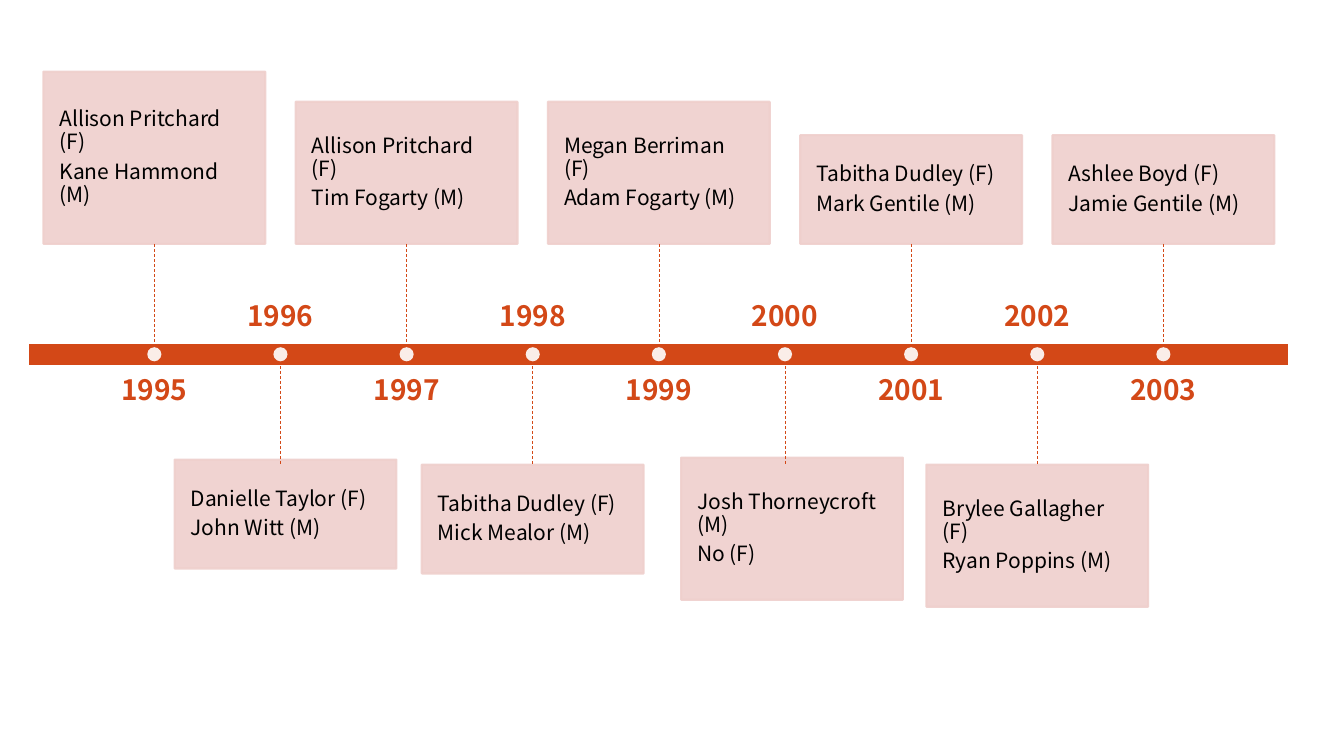
from pptx import Presentation
from pptx.dml.color import RGBColor
from pptx.enum.dml import MSO_LINE
from pptx.enum.shapes import MSO_CONNECTOR, MSO_SHAPE
from pptx.enum.text import MSO_ANCHOR, PP_ALIGN
from pptx.oxml.ns import qn
from pptx.util import Inches, Pt
from lxml.etree import SubElement

# year, names, box height, box shift (right, down)
YEARS = [
    ("1995", ["Allison Pritchard (F)", "Kane Hammond (M)"], 1.71, (0, 0)),
    ("1996", ["Danielle Taylor (F)", "John Witt (M)"], 1.08, (0.05, -0.05)),
    ("1997", ["Allison Pritchard (F)", "Tim Fogarty (M)"], 1.41, (0, 0)),
    ("1998", ["Tabitha Dudley (F)", "Mick Mealor (M)"], 1.08, (0, 0)),
    ("1999", ["Megan Berriman (F)", "Adam Fogarty (M)"], 1.41, (0, 0)),
    ("2000", ["Josh Thorneycroft (M)", "No (F)"], 1.41, (0.07, -0.07)),
    ("2001", ["Tabitha Dudley (F)", "Mark Gentile (M)"], 1.08, (0, 0)),
    ("2002", ["Brylee Gallagher (F)", "Ryan Poppins (M)"], 1.41, (0, 0)),
    ("2003", ["Ashlee Boyd (F)", "Jamie Gentile (M)"], 1.08, (0, 0)),
]

FONT = "Noto Sans CJK JP"
ORANGE, PINK, WHITE, BLACK = "D34817", "EFCFCC", "FFFFFF", "000000"
YEAR_FORMAT = {"name": FONT, "size": Pt(20), "bold": True}
NAME_FORMAT = {"name": FONT, "size": Pt(15), "bold": False}

BAR_LEFT, BAR_TOP, BAR_W, BAR_H = 0.28, 3.4, 12.51, 0.23
BAR_BOTTOM = BAR_TOP + BAR_H
STEP = BAR_W / (len(YEARS) + 1)
STEM = 0.98
BOX_W, BOX_INSET = 2.2, 0.16
LABEL_W, LABEL_H, LABEL_GAP = 2, 0.65, 0.1
DOT = 0.14

prs = Presentation()
prs.slide_width, prs.slide_height = Inches(13.33), Inches(7.5)
slide = prs.slides.add_slide(prs.slide_layouts[6])


def paint(fmt, color, opacity=100):
    """Give a fill a solid colour, see-through when opacity is below 100."""
    fmt.solid()
    fmt.fore_color.rgb = RGBColor.from_string(color)
    if opacity < 100:
        for clr in fmt._xPr.iter(qn("a:srgbClr")):
            SubElement(clr, qn("a:alpha")).set("val", str(opacity * 1000))


def add_shape(kind, x, y, w, h, fill, line=None, opacity=100):
    sp = slide.shapes.add_shape(kind, *map(Inches, (x, y, w, h)))
    sp.shadow.inherit = False
    paint(sp.fill, fill, opacity)
    if line:
        sp.line.width = Pt(1.5)
        paint(sp.line.fill, line, opacity)
    else:
        sp.line.fill.background()
    return sp


def write(sp, lines, fmt, color, align, anchor, inset=0):
    tf = sp.text_frame
    tf.word_wrap = True
    tf.vertical_anchor = anchor
    for side in ("left", "top", "right", "bottom"):
        setattr(tf, f"margin_{side}", Inches(inset))
    for i, line in enumerate(lines):
        p = tf.paragraphs[0] if i == 0 else tf.add_paragraph()
        p.alignment, p.line_spacing, p.space_after = align, 0.9, Pt(5)
        r = p.add_run()
        r.text = line
        for name, value in fmt.items():
            setattr(r.font, name, value)
        r.font.color.rgb = RGBColor.from_string(color)


def add_stem(x, y1, y2):
    cn = slide.shapes.add_connector(MSO_CONNECTOR.STRAIGHT, *map(Inches, (x, y1, x, y2)))
    paint(cn.line.fill, ORANGE)
    cn.line.width, cn.line.dash_style = Pt(0.5), MSO_LINE.DASH
    SubElement(cn._element.spPr, qn("a:effectLst"))


add_shape(MSO_SHAPE.RECTANGLE, BAR_LEFT, BAR_TOP, BAR_W, BAR_H, ORANGE, WHITE)

for i, (year, names, box_h, (dx, dy)) in enumerate(YEARS):
    x = BAR_LEFT + STEP * (i + 1)
    box_above = i % 2 == 0
    if box_above:
        box_y = BAR_TOP - STEM - box_h
        stem = (BAR_TOP - STEM, BAR_TOP)
        label_y, label_anchor = BAR_BOTTOM + LABEL_GAP, MSO_ANCHOR.TOP
    else:
        box_y = BAR_BOTTOM + STEM
        stem = (BAR_BOTTOM, BAR_BOTTOM + STEM)
        label_y, label_anchor = BAR_TOP - LABEL_GAP - LABEL_H, MSO_ANCHOR.BOTTOM

    label = slide.shapes.add_textbox(*map(Inches, (x - LABEL_W / 2, label_y, LABEL_W, LABEL_H)))
    write(label, [year], YEAR_FORMAT, ORANGE, PP_ALIGN.CENTER, label_anchor)

    box = add_shape(MSO_SHAPE.RECTANGLE, x - BOX_W / 2 + dx, box_y + dy, BOX_W, box_h,
                    PINK, PINK, opacity=90)
    write(box, names, NAME_FORMAT, BLACK, PP_ALIGN.LEFT, MSO_ANCHOR.MIDDLE, BOX_INSET)

    add_stem(x, *stem)
    add_shape(MSO_SHAPE.OVAL, x - DOT / 2, BAR_TOP + (BAR_H - DOT) / 2, DOT, DOT,
              WHITE, opacity=90)

prs.save("out.pptx")
